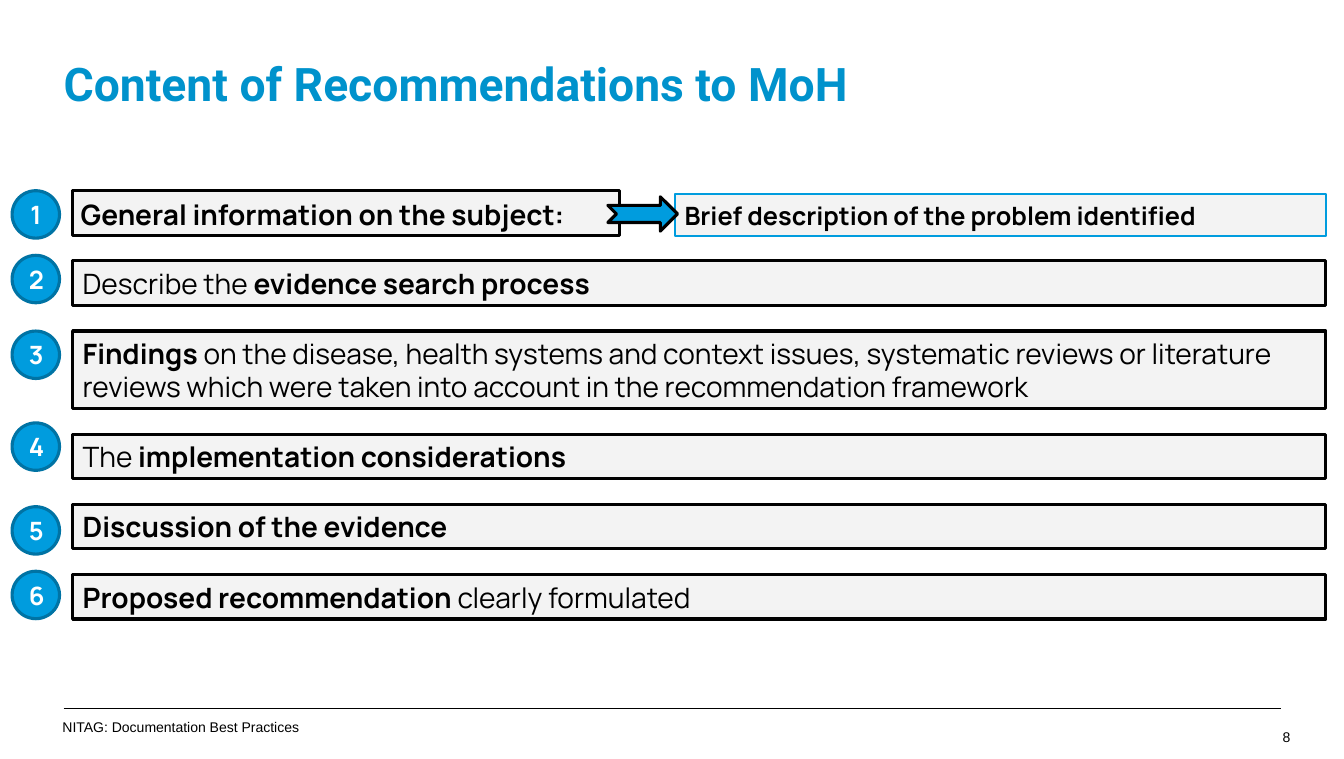
from dataclasses import dataclass

from lxml import etree
from pptx import Presentation
from pptx.dml.color import RGBColor
from pptx.enum.shapes import MSO_CONNECTOR, MSO_SHAPE
from pptx.enum.text import MSO_ANCHOR, PP_ALIGN
from pptx.oxml.ns import qn
from pptx.util import Emu, Inches, Pt

RECT, OVAL = MSO_SHAPE.RECTANGLE, MSO_SHAPE.OVAL
ARROW = MSO_SHAPE.NOTCHED_RIGHT_ARROW
LEFT, CENTER, RIGHT = PP_ALIGN.LEFT, PP_ALIGN.CENTER, PP_ALIGN.RIGHT
TOP, MIDDLE = MSO_ANCHOR.TOP, MSO_ANCHOR.MIDDLE
STRAIGHT = MSO_CONNECTOR.STRAIGHT

WIDTH, HEIGHT = Inches(13.31), Inches(7.52)
BLUE, NAVY, SKY = "009CDE", "0073A4", "0092CC"
BLACK, WHITE, GRAY = "000000", "FFFFFF", "F3F3F3"
PAD = (0.1, 0.05, 0.1, 0.05)

# Percent of the slide's width or height
BAR_LEFT, BAR_WIDTH, BAR_TOP, BAR_GAP = 5.41, 93.24, 25.13, 3.39
ONE_LINE, TWO_LINES = 5.85, 10.24
DOT_LEFT, DOT_WIDTH, DOT_HEIGHT = 0.9, 3.53, 6.25


@dataclass
class Box:
    """Place in percent of the slide's size."""
    left: float
    top: float
    width: float
    height: float

    def place(self) -> tuple[Emu, Emu, Emu, Emu]:
        return (across(self.left), down(self.top),
                across(self.width), down(self.height))


@dataclass
class Style:
    size: float
    font: str = "Manrope"
    color: str = BLACK
    align: PP_ALIGN = LEFT
    anchor: MSO_ANCHOR = MIDDLE
    pad: tuple[float, float, float, float] = PAD
    spacing: float = 1.0


@dataclass
class Run:
    text: str
    bold: bool = False


@dataclass
class Item:
    runs: list[Run]
    dot_top: float
    height: float = ONE_LINE
    width: float = BAR_WIDTH


ITEM = Style(20)
HEAD = Style(20, pad=(0.08, 0, 0.02, 0), spacing=1.1)
DOT = Style(18, color=WHITE, align=CENTER)

ITEMS = [
    Item([Run("General information on the subject:", True)], 25.13, width=40.72),
    Item([Run("Describe the "), Run("evidence search process", True)], 33.64),
    Item([Run("Findings ", True),
          Run("on the disease, health systems and context issues, systematic "
              "reviews or literature reviews which were taken into account in "
              "the recommendation framework")], 43.62, TWO_LINES),
    Item([Run("The "), Run("implementation considerations", True)], 55.72),
    Item([Run("Discussion of the evidence", True)], 66.76),
    Item([Run("Proposed recommendation ", True), Run("clearly formulated")], 75.27),
]


def across(share: float) -> Emu:
    return Emu(round(WIDTH * share / 100))


def down(share: float) -> Emu:
    return Emu(round(HEIGHT * share / 100))


def paint(target, color: str) -> None:
    """Give a fill or a font one solid colour."""
    if hasattr(target, "solid"):
        target.solid()
        target.fore_color.rgb = RGBColor.from_string(color)
    else:
        target.color.rgb = RGBColor.from_string(color)


def write(shape, runs: list[Run], style: Style) -> None:
    frame = shape.text_frame
    frame.word_wrap = True
    frame.vertical_anchor = style.anchor
    (frame.margin_left, frame.margin_top,
     frame.margin_right, frame.margin_bottom) = map(Inches, style.pad)
    line = frame.paragraphs[0]
    line.alignment, line.line_spacing = style.align, style.spacing
    for part in runs:
        run = line.add_run()
        run.text = part.text
        run.font.name, run.font.size = style.font, Pt(style.size)
        run.font.bold = part.bold
        paint(run.font, style.color)


def draw(slide, kind: MSO_SHAPE, box: Box, fill: str, edge: str,
         weight: float = 2.25):
    shape = slide.shapes.add_shape(kind, *box.place())
    shape.shadow.inherit = False
    paint(shape.fill, fill)
    paint(shape.line.fill, edge)
    shape.line.width = Pt(weight)
    return shape


def label(slide, box: Box, text: str, style: Style, bold: bool = False) -> None:
    write(slide.shapes.add_textbox(*box.place()), [Run(text, bold)], style)


def rule(slide, left: float, right: float, top: float) -> None:
    line = slide.shapes.add_connector(
        STRAIGHT, across(left), down(top), across(right), down(top))
    paint(line.line.fill, BLACK)
    line.line.width = Pt(0.75)
    etree.SubElement(line._element.spPr, qn("a:effectLst"))


def frame_page(slide) -> None:
    """Draw the title and the footer."""
    label(slide, Box(4.73, 7.98, 90.31, 6.91), "Content of Recommendations to MoH",
          Style(33, "Roboto", SKY, anchor=TOP, pad=(0, 0.01, 0, 0), spacing=0.9),
          bold=True)
    rule(slide, 4.73, 95.34, 93.35)
    label(slide, Box(3.91, 94.02, 28.93, 3.32), "NITAG: Documentation Best Practices",
          Style(10, "Arial", anchor=TOP))
    label(slide, Box(93.61, 96.01, 2.4, 2.66), "8",
          Style(10, "Arial", align=RIGHT, anchor=TOP, pad=(0, 0, 0, 0)))


def list_items(slide) -> None:
    top = BAR_TOP
    for count, item in enumerate(ITEMS, 1):
        bar = draw(slide, RECT, Box(BAR_LEFT, top, item.width, item.height),
                   GRAY, BLACK)
        write(bar, item.runs, HEAD if count == 1 else ITEM)
        dot = draw(slide, OVAL, Box(DOT_LEFT, item.dot_top, DOT_WIDTH, DOT_HEIGHT),
                   BLUE, NAVY)
        write(dot, [Run(str(count), True)], DOT)
        top += item.height + BAR_GAP


def main() -> None:
    deck = Presentation()
    deck.slide_width, deck.slide_height = WIDTH, HEIGHT
    slide = deck.slides.add_slide(deck.slide_layouts[6])
    frame_page(slide)
    brief = draw(slide, RECT, Box(50.19, 25.53, 48.46, 5.59), GRAY, BLUE, 1.5)
    write(brief, [Run("Brief description of the problem identified", True)], Style(18))
    list_items(slide)
    draw(slide, ARROW, Box(45.23, 25.93, 5.18, 4.52), BLUE, BLACK)
    deck.save("out.pptx")


if __name__ == "__main__":
    main()
